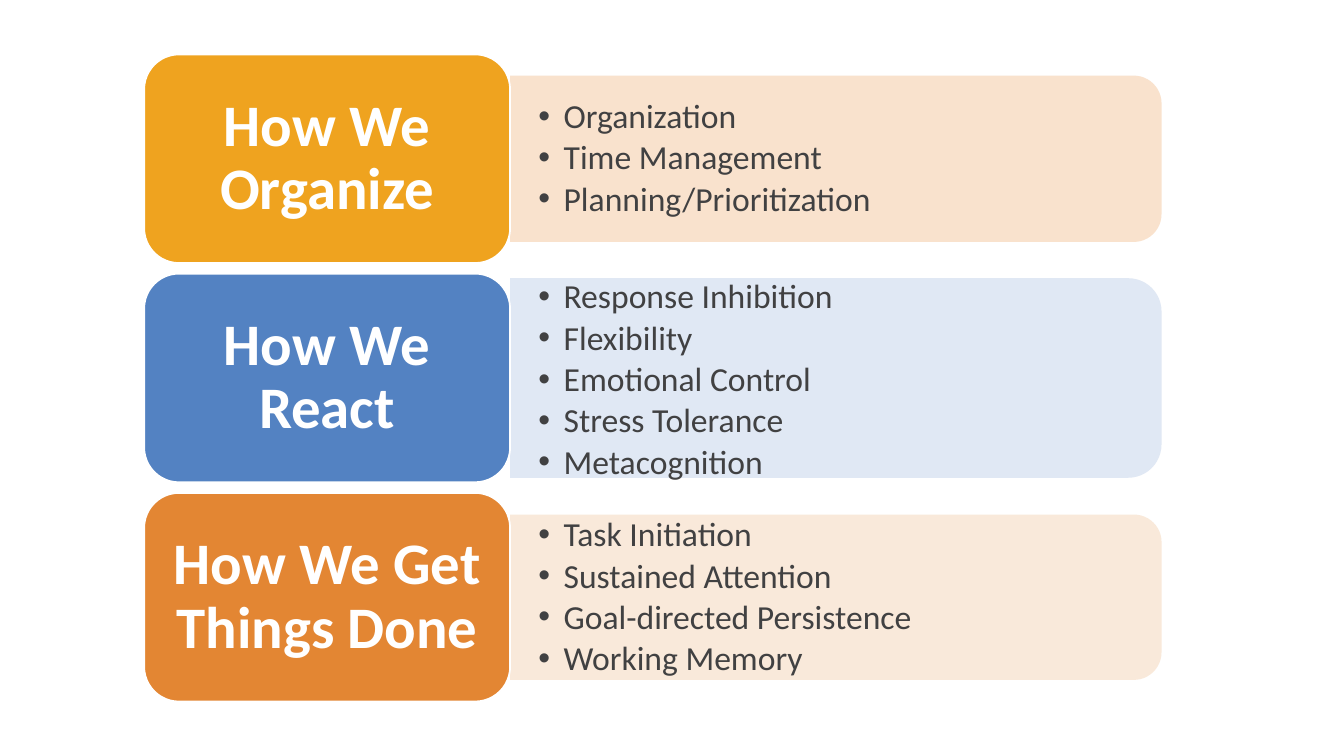
from lxml import etree
from pptx import Presentation
from pptx import util as u
from pptx.dml import color as c
from pptx.enum import shapes, text
from pptx.oxml import ns

COLOURS = {
    "white": "FFFFFF", "text": "414142",
    "gold": "EFA31F", "pale gold": "F9DFC8",
    "blue": "5382C2", "pale blue": "DDE6F3",
    "orange": "E38633", "pale orange": "F9E7D6",
}

# Heading, colour, panel height, list top, list height, skills
GROUPS = [
    ("How We Organize", "gold", 1.65, 0.83, 1.49,
     ["Organization", "Time Management", "Planning/Prioritization"]),
    ("How We React", "blue", 1.98, 2.88, 1.79,
     ["Response Inhibition", "Flexibility", "Emotional Control",
      "Stress Tolerance", "Metacognition"]),
    ("How We Get Things Done", "orange", 1.64, 5.19, 1.48,
     ["Task Initiation", "Sustained Attention",
      "Goal-directed Persistence", "Working Memory"]),
]
BLOCK_LEFT, BLOCK_TOP, BLOCK_WIDTH, BLOCK_HEIGHT = 1.43, 0.54, 3.63, 2.07
ROW_STEP = 2.175
PANEL_LENGTH, PANEL_CENTRE = 6.46, 8.29


def rgb(name):
    return c.RGBColor.from_string(COLOURS[name])


def set_frame(shape, side, edge):
    frame = shape.text_frame
    frame.word_wrap = True
    frame.vertical_anchor = text.MSO_ANCHOR.MIDDLE
    frame.margin_left = frame.margin_right = u.Inches(side)
    frame.margin_top = frame.margin_bottom = u.Inches(edge)
    return frame


presentation = Presentation()
presentation.slide_width = u.Inches(13.33)
presentation.slide_height = u.Inches(7.5)
slide = presentation.slides.add_slide(presentation.slide_layouts[6])

for row, (heading, colour, panel_height, list_top, list_height, skills) in enumerate(GROUPS):
    top = BLOCK_TOP + row * ROW_STEP
    middle = top + BLOCK_HEIGHT / 2

    # Pale panel, turned so that its rounded end points right
    panel = slide.shapes.add_shape(
        shapes.MSO_SHAPE.ROUND_2_SAME_RECTANGLE,
        u.Inches(PANEL_CENTRE - panel_height / 2), u.Inches(middle - PANEL_LENGTH / 2),
        u.Inches(panel_height), u.Inches(PANEL_LENGTH))
    panel.rotation = 90
    panel.adjustments[0] = 0.167
    panel.shadow.inherit = False
    panel.fill.solid()
    panel.fill.fore_color.rgb = rgb("pale " + colour)
    panel.line.fill.background()
    fill_colour = panel.fill._xPr.find(".//" + ns.qn("a:srgbClr"))
    etree.SubElement(fill_colour, ns.qn("a:alpha"), val="90000")

    # Bulleted skills
    box = slide.shapes.add_textbox(
        u.Inches(5.07), u.Inches(list_top), u.Inches(6.38), u.Inches(list_height))
    frame = set_frame(box, 0.27, 0.14)
    for number, skill in enumerate(skills):
        paragraph = frame.add_paragraph() if number else frame.paragraphs[0]
        paragraph.text = skill
        paragraph.level = 1
        paragraph.line_spacing = 0.9
        if number:
            paragraph.space_before = u.Pt(3.6)
        properties = paragraph._p.get_or_add_pPr()
        properties.set("marL", str(u.Inches(0.25)))
        properties.set("indent", str(u.Inches(-0.25)))
        etree.SubElement(properties, ns.qn("a:buFont"), typeface="Arial")
        etree.SubElement(properties, ns.qn("a:buChar"), char="•")
        paragraph.font.name = "Calibri"
        paragraph.font.size = u.Pt(24)
        paragraph.font.color.rgb = rgb("text")

    # Heading block
    block = slide.shapes.add_shape(
        shapes.MSO_SHAPE.ROUNDED_RECTANGLE,
        u.Inches(BLOCK_LEFT), u.Inches(top), u.Inches(BLOCK_WIDTH), u.Inches(BLOCK_HEIGHT))
    block.adjustments[0] = 0.167
    block.shadow.inherit = False
    block.fill.solid()
    block.fill.fore_color.rgb = rgb(colour)
    block.line.color.rgb = rgb("white")
    block.line.width = u.Pt(1.25)
    paragraph = set_frame(block, 0.17, 0.09).paragraphs[0]
    paragraph.text = heading
    paragraph.alignment = text.PP_ALIGN.CENTER
    paragraph.line_spacing = 0.9
    paragraph.font.name = "Calibri"
    paragraph.font.size = u.Pt(42)
    paragraph.font.bold = True
    paragraph.font.color.rgb = rgb("white")

presentation.save("out.pptx")
